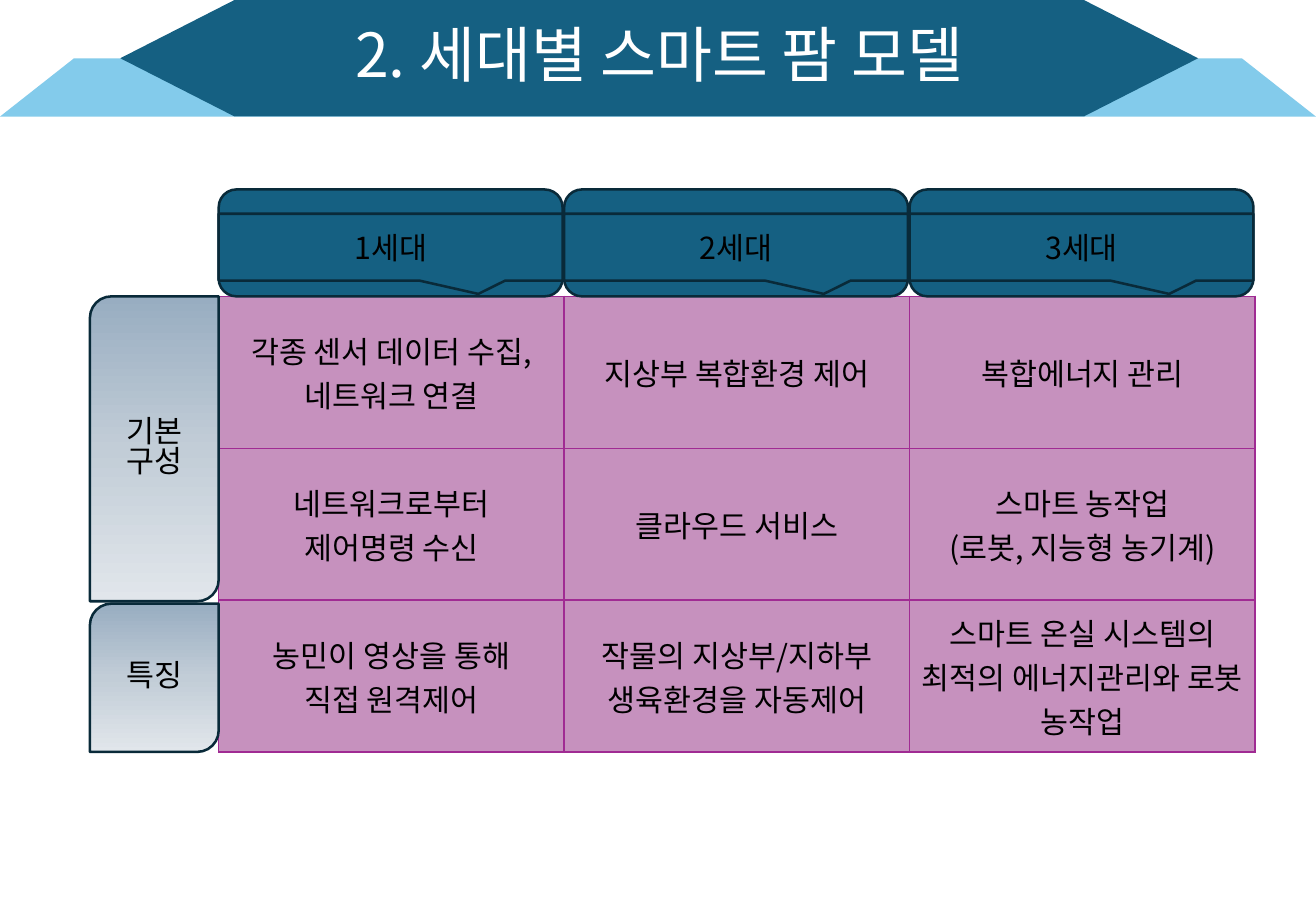
from copy import deepcopy

from lxml.etree import SubElement
from pptx import Presentation
from pptx.dml.color import RGBColor
from pptx.enum.shapes import MSO_SHAPE
from pptx.enum.text import MSO_ANCHOR, PP_ALIGN
from pptx.oxml.ns import qn
from pptx.util import Inches, Pt

FONT = "Noto Sans CJK KR"
NAVY, SKY, OUTLINE = "156082", "83CBEB", "092A39"
CELL_FILL, CELL_BORDER = "C691BE", "A02B93"
LABEL_GRADIENT = ("98ADC1", "C2CDD7", "E1E6EB")

GRID_LEFT, GRID_TOP = 1.8, 2.44
COLUMN_WIDTH, ROW_HEIGHT = 2.843, 1.25
LABEL_LEFT, LABEL_WIDTH = 0.74, 1.06
GENERATIONS = ("1세대", "2세대", "3세대")
MODELS = (
    ("각종 센서 데이터 수집, 네트워크 연결", "지상부 복합환경 제어", "복합에너지 관리"),
    ("네트워크로부터\n제어명령 수신", "클라우드 서비스", "스마트 농작업\n(로봇, 지능형 농기계)"),
    ("농민이 영상을 통해\n직접 원격제어", "작물의 지상부/지하부 생육환경을 자동제어",
     "스마트 온실 시스템의 최적의 에너지관리와 로봇 농작업"),
)


def color(hex_code):
    return RGBColor.from_string(hex_code)


def write(frame, text, size=18, hex_code="000000", spacing=None):
    frame.text = text
    frame.word_wrap = True
    for paragraph in frame.paragraphs:
        paragraph.alignment = PP_ALIGN.CENTER
        if spacing:
            paragraph.line_spacing = spacing
        for run in paragraph.runs:
            run.font.size = Pt(size)
            run.font.name = FONT
            run.font.color.rgb = color(hex_code)
            SubElement(run.font._element, qn("a:ea"), typeface=FONT)


def add_block(slide, kind, left, top, width, height, fill=None, outline=None, adjust=()):
    block = slide.shapes.add_shape(kind, Inches(left), Inches(top), Inches(width), Inches(height))
    block.shadow.inherit = False
    for index, value in enumerate(adjust):
        block.adjustments[index] = value
    if fill:
        block.fill.solid()
        block.fill.fore_color.rgb = color(fill)
    if outline:
        block.line.color.rgb = color(outline)
        block.line.width = Pt(1.5)
    else:
        block.line.fill.background()
    return block


def add_banner(slide, title):
    add_block(slide, MSO_SHAPE.TRAPEZOID, 0, 0.48, 10.83, 0.48, SKY, adjust=[1.27])
    add_block(slide, MSO_SHAPE.HEXAGON, 0.99, 0, 8.87, 0.96, NAVY, adjust=[0.98])
    heading = slide.shapes.add_textbox(Inches(2.04), Inches(0.13), Inches(6.77), Inches(0.69))
    write(heading.text_frame, title, 36, "FFFFFF", 0.9)
    heading.text_frame.vertical_anchor = MSO_ANCHOR.MIDDLE


def add_borders(cell):
    properties = cell._tc.get_or_add_tcPr()
    for side in ("lnL", "lnR", "lnT", "lnB"):
        border = SubElement(properties, qn(f"a:{side}"), w=str(Pt(1)))
        solid = SubElement(border, qn("a:solidFill"))
        SubElement(solid, qn("a:srgbClr"), val=CELL_BORDER)


def add_model_table(slide):
    rows, columns = len(MODELS), len(GENERATIONS)
    table = slide.shapes.add_table(
        rows, columns, Inches(GRID_LEFT), Inches(GRID_TOP),
        Inches(columns * COLUMN_WIDTH), Inches(rows * ROW_HEIGHT)).table
    table.first_row = table.horz_banding = False
    for row, models in enumerate(MODELS):
        for column, model in enumerate(models):
            cell = table.cell(row, column)
            write(cell.text_frame, model)
            cell.vertical_anchor = MSO_ANCHOR.MIDDLE
            add_borders(cell)
            cell.fill.solid()
            cell.fill.fore_color.rgb = color(CELL_FILL)


def add_generation(slide, left, name):
    add_block(slide, MSO_SHAPE.ROUNDED_RECTANGLE, left, 1.56, 2.83, 0.88, NAVY, OUTLINE)
    callout = add_block(slide, MSO_SHAPE.RECTANGULAR_CALLOUT, left, 1.76, 2.83, 0.55,
                        NAVY, OUTLINE, [0.255, 0.7])
    write(callout.text_frame, name)


def add_row_label(slide, top, height, text):
    label = add_block(slide, MSO_SHAPE.ROUND_2_DIAG_RECTANGLE, LABEL_LEFT, top,
                      LABEL_WIDTH, height, outline=OUTLINE)
    label.fill.gradient()
    label.fill.gradient_angle = 270
    stops = label.fill.gradient_stops
    first = stops[0]._gs
    first.addnext(deepcopy(first))
    for index, (stop, shade) in enumerate(zip(label.fill.gradient_stops, LABEL_GRADIENT)):
        stop.position = index / 2
        stop.color.rgb = color(shade)
    write(label.text_frame, text, spacing=0.82)


def main():
    deck = Presentation()
    deck.slide_width, deck.slide_height = Inches(10.83), Inches(7.5)
    slide = deck.slides.add_slide(deck.slide_layouts[6])
    add_banner(slide, "2. 세대별 스마트 팜 모델")
    add_model_table(slide)
    for index, name in enumerate(GENERATIONS):
        add_generation(slide, GRID_LEFT + index * COLUMN_WIDTH, name)
    add_row_label(slide, GRID_TOP, 2.51, "기본\n구성")
    add_row_label(slide, 4.97, 1.22, "특징")
    deck.save("out.pptx")


if __name__ == "__main__":
    main()
